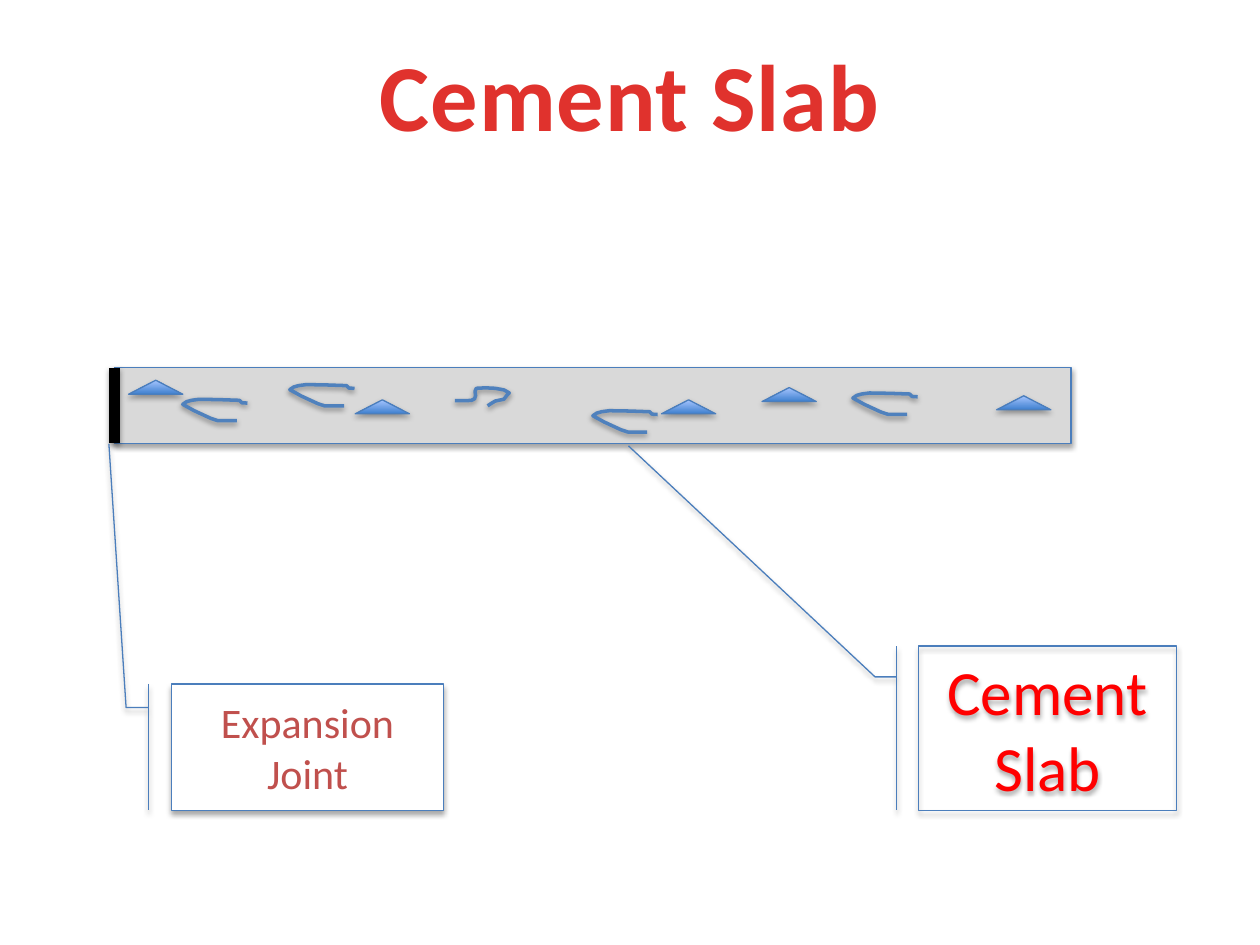
from lxml.etree import SubElement
from pptx import Presentation
from pptx.dml.color import RGBColor
from pptx.enum.shapes import MSO_CONNECTOR, MSO_SHAPE
from pptx.enum.text import MSO_ANCHOR, PP_ALIGN
from pptx.oxml.ns import qn
from pptx.util import Pt

TITLE_RED = RGBColor(0xE0, 0x32, 0x2D)
LABEL_RED = RGBColor(0xFF, 0x00, 0x00)
BRICK = RGBColor(0xC0, 0x50, 0x4D)
SLAB_GRAY = RGBColor(0xD9, 0xD9, 0xD9)
OUTLINE_BLUE = RGBColor(0x4B, 0x7E, 0xBC)
FIBER_BLUE = RGBColor(0x4F, 0x81, 0xBD)
STONE_DARK = RGBColor(0x3F, 0x80, 0xCE)
STONE_LIGHT = RGBColor(0xA4, 0xC4, 0xFF)
WHITE = RGBColor(0xFF, 0xFF, 0xFF)
BLACK = RGBColor(0, 0, 0)

SLAB_LEFT, SLAB_TOP, SLAB_WIDTH, SLAB_HEIGHT = 65.5, 210.2, 546.5, 43.2

# Left and top of each stone and each hooked fiber, in points
STONES = [(203, 228.5), (378, 228.5), (569.5, 226.2), (73.5, 217.3), (435.5, 221.5)]
HOOKS = [(487.4, 224.6), (104.4, 228.2), (338.8, 234.7), (165.6, 219.8)]

# Fiber outlines, relative to their left and top
HOOK = [(31, 12.2), (20, 12.2), (16, 10.9), (6.5, 6.5), (0, 2.9), (2.2, 1.4),
        (5, 0.6), (9.4, 0), (21, 0.2), (32.4, 0.6), (33.8, 2), (37, 2.2)]
CURL = [(18.7, 10.3), (20.8, 8.9), (23, 7.6), (28, 6.5), (29.5, 4.5), (31, 2.9),
        (28, 1.2), (23, 0.3), (17.3, 0), (12.2, 0.3), (11.5, 2), (11.8, 4.5),
        (11.2, 6.3), (9.4, 7.2), (5.5, 7.4), (0, 7.4)]


def add_shadow(shape, opacity=35, distance=1.8):
    properties = shape._element.spPr
    effects = properties.find(qn("a:effectLst"))
    if effects is None:
        effects = SubElement(properties, qn("a:effectLst"))
    shadow = SubElement(effects, qn("a:outerShdw"), blurRad=str(Pt(3.1)),
                        dist=str(Pt(distance)), dir="5400000", rotWithShape="0")
    color = SubElement(shadow, qn("a:srgbClr"), val=str(BLACK))
    SubElement(color, qn("a:alpha"), val=str(opacity * 1000))


def add_outlined(slide, kind, left, top, width, height):
    shape = slide.shapes.add_shape(kind, Pt(left), Pt(top), Pt(width), Pt(height))
    shape.line.color.rgb = OUTLINE_BLUE
    shape.line.width = Pt(0.75)
    shape.shadow.inherit = False
    add_shadow(shape)
    return shape


def add_title(slide, text):
    title = slide.shapes.title
    title.left, title.top, title.width, title.height = Pt(36), Pt(17.3), Pt(648), Pt(72.7)
    title.text_frame.text = text
    title.text_frame.vertical_anchor = MSO_ANCHOR.MIDDLE
    paragraph = title.text_frame.paragraphs[0]
    paragraph.alignment = PP_ALIGN.CENTER
    font = paragraph.font
    font.name, font.size, font.bold = "Calibri", Pt(54), True
    font.color.rgb = TITLE_RED
    paragraph.runs[0].font._element.set("spc", "50")


def add_slab(slide):
    slab = add_outlined(slide, MSO_SHAPE.RECTANGLE,
                        SLAB_LEFT, SLAB_TOP, SLAB_WIDTH, SLAB_HEIGHT)
    slab.fill.solid()
    slab.fill.fore_color.rgb = SLAB_GRAY


def add_stone(slide, left, top):
    stone = add_outlined(slide, MSO_SHAPE.ISOSCELES_TRIANGLE, left, top, 31, 8)
    stone.fill.gradient()
    stone.fill.gradient_angle = 90
    for stop, color in zip(stone.fill.gradient_stops, (STONE_DARK, STONE_LIGHT)):
        stop.color.rgb = color


def add_fiber(slide, outline, left, top):
    points = [(Pt(left + x), Pt(top + y)) for x, y in outline]
    builder = slide.shapes.build_freeform(*points[0])
    builder.add_line_segments(points[1:], close=False)
    fiber = builder.convert_to_shape()
    fiber.fill.background()
    fiber.line.color.rgb = FIBER_BLUE
    fiber.line.width = Pt(2)
    fiber.shadow.inherit = False
    add_shadow(fiber, 38, 1.6)


def add_joint(slide):
    joint = slide.shapes.add_connector(
        MSO_CONNECTOR.STRAIGHT, Pt(SLAB_LEFT), Pt(SLAB_TOP),
        Pt(SLAB_LEFT), Pt(SLAB_TOP + SLAB_HEIGHT))
    joint.line.color.rgb = BLACK
    joint.line.width = Pt(6)
    add_shadow(joint, 38, 1.6)


def add_callout(slide, text, box, tip, size, color, fill=None):
    callout = add_outlined(slide, MSO_SHAPE.LINE_CALLOUT_2_BORDER_AND_ACCENT_BAR, *box)
    # Leader: start, elbow and tip as (y, x) fractions of the box
    for index, value in enumerate((0.1875, -0.0833, 0.1875, -0.1667, *tip)):
        callout.adjustments[index] = value
    if fill is None:
        callout.fill.background()
    else:
        callout.fill.solid()
        callout.fill.fore_color.rgb = fill
    frame = callout.text_frame
    frame.text = text
    frame.word_wrap = True
    frame.vertical_anchor = MSO_ANCHOR.MIDDLE
    paragraph = frame.paragraphs[0]
    paragraph.alignment = PP_ALIGN.CENTER
    paragraph.font.name = "Calibri"
    paragraph.font.size = Pt(size)
    paragraph.font.color.rgb = color


def main():
    deck = Presentation()
    deck.slide_width, deck.slide_height = Pt(720), Pt(540)
    slide = deck.slides.add_slide(deck.slide_layouts[5])
    add_title(slide, "Cement Slab")

    # Slab with its stones, fibers and joint
    add_slab(slide)
    for left, top in STONES:
        add_stone(slide, left, top)
    add_fiber(slide, CURL, 260, 221.6)
    for left, top in HOOKS:
        add_fiber(slide, HOOK, left, top)
    add_joint(slide)

    # Labels
    add_callout(slide, "Cement Slab", (524.7, 369.2, 147.8, 93.8),
                (-1.22, -1.12), 36, LABEL_RED)
    add_callout(slide, "Expansion Joint", (98, 390.8, 155.5, 72.2),
                (-1.9, -0.23), 24, BRICK, WHITE)
    deck.save("out.pptx")


if __name__ == "__main__":
    main()
